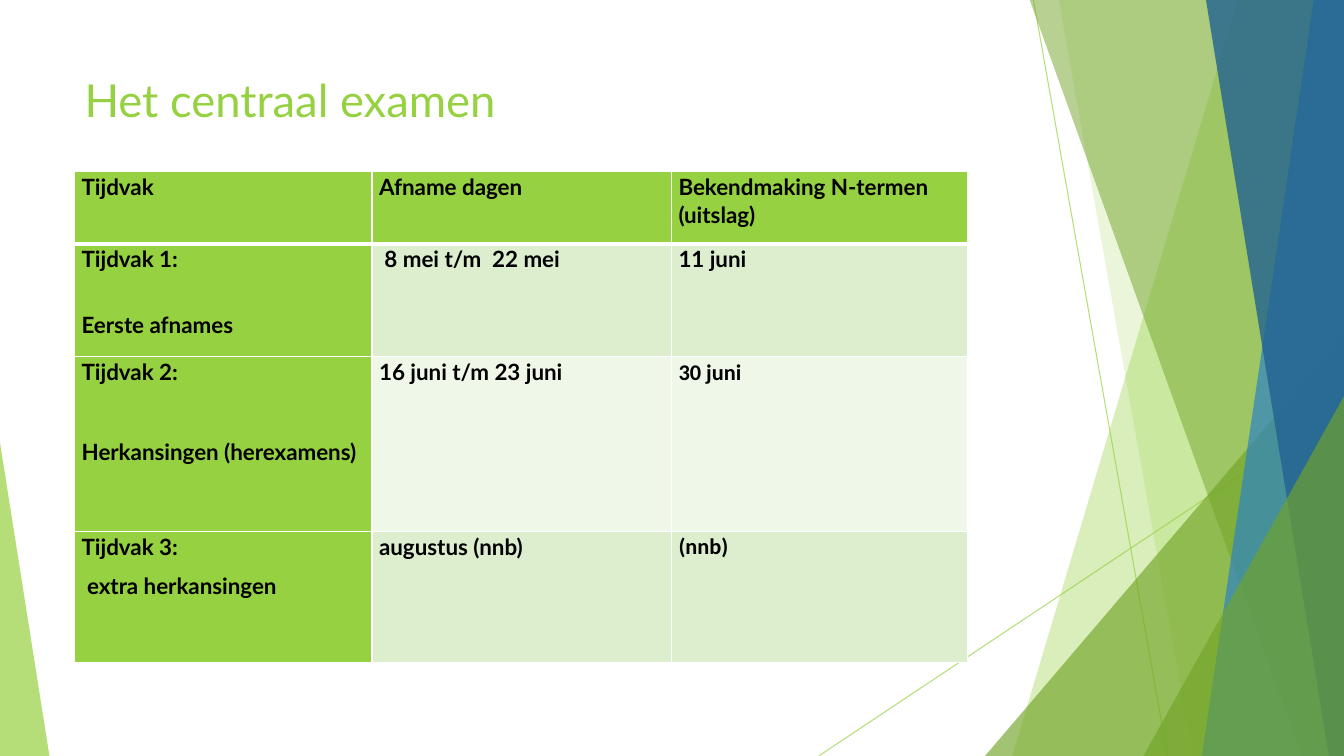
import pptx
import pptx.util
import pptx.dml.color
import pptx.enum.shapes
import pptx.enum.text
import pptx.oxml
import pptx.oxml.ns
from lxml import etree

Inches = pptx.util.Inches
Pt = pptx.util.Pt
RGB = pptx.dml.color.RGBColor.from_string
qn = pptx.oxml.ns.qn

theme = {
    "lime": "96D141", "olive": "72A528", "blue": "2E83C3", "navy": "226292",
    "mint": "DDEECF", "pale": "EFF7E9", "white": "FFFFFF", "black": "000000",
    "font": "Lato", "alt": "Calibri", "title": 32.4, "body": 16,
}


def write(frame, text, size, color, font=theme["font"], bold=False,
          line=1, after=0, gap=0):
    frame.word_wrap = True
    for i, part in enumerate(text.split("\n")):
        para = frame.paragraphs[0] if i == 0 else frame.add_paragraph()
        para.line_spacing = line
        para.space_after = Pt(after)
        para.space_before = Pt(gap if i else 0)
        run = para.add_run()
        run.text = part
        run.font.size = Pt(size)
        run.font.name = font
        run.font.bold = bold
        run.font.color.rgb = RGB(theme[color])


def tint(fill, color, alpha):
    fill.solid()
    fill.fore_color.rgb = RGB(theme[color])
    node = fill._xPr.find(qn("a:solidFill"))[0]
    etree.SubElement(node, qn("a:alpha"), val=str(alpha * 1000))


deck = pptx.Presentation()
deck.slide_width = Inches(13.33)
deck.slide_height = Inches(7.5)
slide = deck.slides.add_slide(deck.slide_layouts[6])
shapes = slide.shapes

for x1, y1, x2, y2 in [(10.25, 0, 11.58, 7.5), (13.33, 4.03, 8.12, 7.5)]:
    rule = shapes.add_connector(
        pptx.enum.shapes.MSO_CONNECTOR.STRAIGHT,
        Inches(x1), Inches(y1), Inches(x2), Inches(y2))
    rule.line.width = Pt(0.75)
    tint(rule.line.fill, "lime", 70)
    etree.SubElement(rule._element.spPr, qn("a:effectLst"))

facets = [
    ("band", (12.28, 10.04), "lime", 36),
    ("band", (10.5, 11.83), "lime", 20),
    ("peak", (9.77, 3.33, 3.56, 4.17, 1), "olive", 66),
    ("band", (10.21, 12.91), "olive", 50),
    ("band", (13.03, 11.92), "blue", 70),
    ("band", (11.96, 13.18), "navy", 80),
    ("peak", (11.34, 3.93, 1.99, 3.57, 1), "olive", 66),
    ("peak", (0, 4.39, 0.49, 3.11, 0), "lime", 70),
]
for kind, place, color, alpha in facets:
    if kind == "band":
        top, foot = place
        pen = shapes.build_freeform(Inches(top), Inches(-0.01))
        pen.add_line_segments([
            (Inches(x), Inches(y)) for x, y in
            [(13.33, -0.01), (13.33, 7.5), (foot, 7.5)]], close=True)
        facet = pen.convert_to_shape()
    else:
        facet = shapes.add_shape(
            pptx.enum.shapes.MSO_SHAPE.ISOSCELES_TRIANGLE,
            *[Inches(n) for n in place[:4]])
        facet.adjustments[0] = place[4]
    facet.shadow.inherit = False
    facet.line.fill.background()
    tint(facet.fill, color, alpha)

title = shapes.add_textbox(Inches(0.74), Inches(0.67), Inches(9.4), Inches(1.44))
title.text_frame.vertical_anchor = pptx.enum.text.MSO_ANCHOR.TOP
write(title.text_frame, "Het centraal examen", theme["title"], "lime")

rows = [
    ("Tijdvak", "Afname dagen", "Bekendmaking N-termen (uitslag)"),
    ("Tijdvak 1:\nEerste afnames", " 8 mei t/m  22 mei", "11 juni"),
    ("Tijdvak 2:\nHerkansingen (herexamens)", "16 juni t/m 23 juni", "30 juni"),
    ("Tijdvak 3:\n extra herkansingen", "augustus (nnb)", "(nnb)"),
]
gaps = [0, 18.6, 28.5, 0]
grid = shapes.add_table(
    4, 3, Inches(0.74), Inches(1.7), Inches(8.86), Inches(4.87)).table
for col, width in zip(grid.columns, [2.95, 2.97, 2.94]):
    col.width = Inches(width)
for row, height in zip(grid.rows, [0.72, 1.12, 1.73, 1.3]):
    row.height = Inches(height)

for r, texts in enumerate(rows):
    for c, text in enumerate(texts):
        cell = grid.cell(r, c)
        cell.margin_left = cell.margin_right = Inches(0.07)
        cell.margin_top = cell.margin_bottom = 0
        props = cell._tc.get_or_add_tcPr()
        for side in "LRTB":
            thick = (r, side) in [(0, "B"), (1, "T")]
            edge = etree.SubElement(
                props, qn("a:ln" + side), w=str(Pt(3 if thick else 1)))
            fill = etree.SubElement(edge, qn("a:solidFill"))
            etree.SubElement(fill, qn("a:srgbClr"), val=theme["white"])
        shade = "lime" if r == 0 or c == 0 else "mint" if r % 2 else "pale"
        cell.fill.solid()
        cell.fill.fore_color.rgb = RGB(theme[shade])
        font = theme["alt"] if c == 2 and r > 1 else theme["font"]
        write(cell.text_frame, text, theme["body"], "black", font=font,
              bold=True, line=1.07, after=8, gap=gaps[r])

deck.save("out.pptx")
